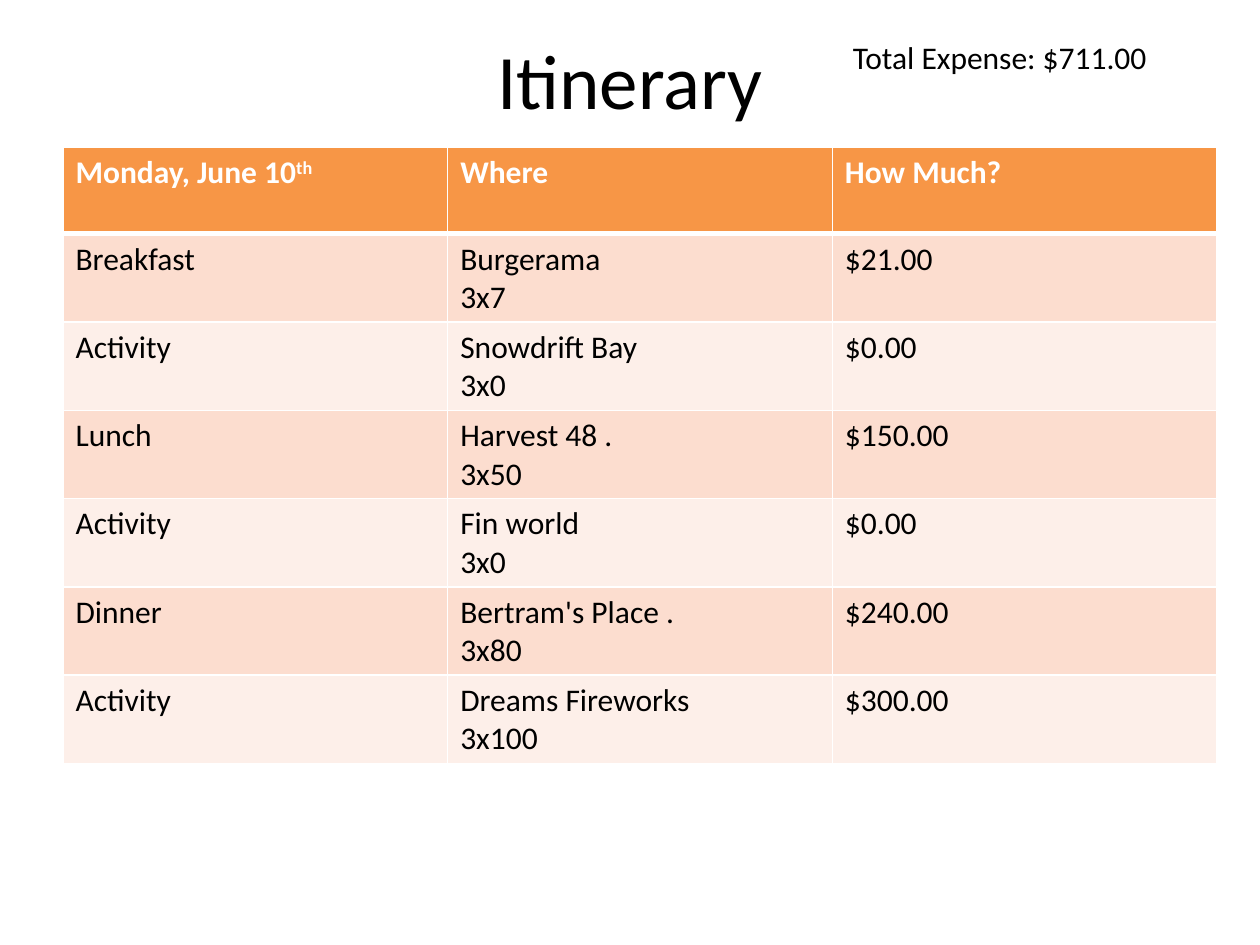
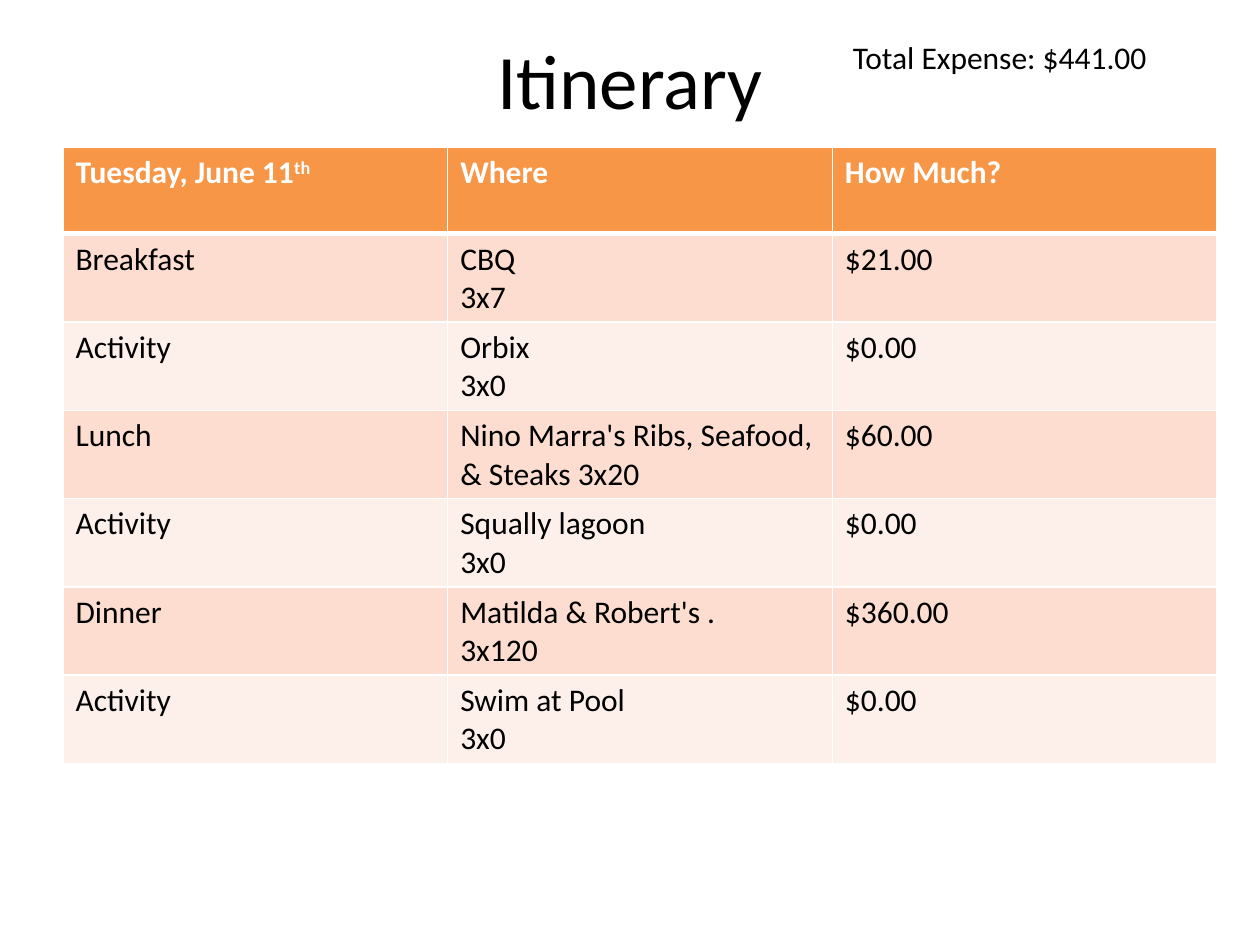
"""Build two daily itinerary slides, each with a total and an expense table."""
from lxml import etree
from pptx import Presentation
from pptx.dml.color import RGBColor
from pptx.enum.text import MSO_ANCHOR, PP_ALIGN
from pptx.oxml.ns import qn
from pptx.util import Inches, Pt

CENTER, LEFT = PP_ALIGN.CENTER, PP_ALIGN.LEFT
MIDDLE, TOP = MSO_ANCHOR.MIDDLE, MSO_ANCHOR.TOP
FONT = "Calibri"
BLACK, WHITE = "000000", "FFFFFF"
HEADER, BANDS = "F79646", ("FCDDCF", "FDEFE9")
MEALS = ("Breakfast", "Activity", "Lunch", "Activity", "Dinner", "Activity")

DAYS = [
    ("Monday, June 10", "$711.00", [
        ("Burgerama\n3x7", "$21.00"),
        ("Snowdrift Bay\n3x0", "$0.00"),
        ("Harvest 48 .\n3x50", "$150.00"),
        ("Fin world\n3x0", "$0.00"),
        ("Bertram's Place .\n3x80", "$240.00"),
        ("Dreams Fireworks\n3x100", "$300.00"),
    ]),
    ("Tuesday, June 11", "$441.00", [
        ("CBQ\n3x7", "$21.00"),
        ("Orbix\n3x0", "$0.00"),
        ("Nino Marra's Ribs, Seafood, & Steaks 3x20", "$60.00"),
        ("Squally lagoon\n3x0", "$0.00"),
        ("Matilda & Robert's .\n3x120", "$360.00"),
        ("Swim at Pool\n3x0", "$0.00"),
    ]),
]


def rgb(color):
    return RGBColor.from_string(color)


def write(tf, text, size=18, color=BLACK, bold=False, align=LEFT):
    tf.word_wrap = True
    tf.text = text
    for p in tf.paragraphs:
        p.alignment = align
        p.font.name = FONT
        p.font.size = Pt(size)
        p.font.bold = bold
        p.font.color.rgb = rgb(color)


prs = Presentation()
prs.slide_width, prs.slide_height = Inches(10), Inches(7.5)

for day, total, stops in DAYS:
    s = prs.slides.add_slide(prs.slide_layouts[6])
    for text, box, size, align, anchor in (
        ("Itinerary", (0.5, 0, 9, 1.25), 44, CENTER, MIDDLE),
        (f"Total Expense: {total}", (6.67, 0.25, 3.08, 0.4), 18, LEFT, TOP),
    ):
        tf = s.shapes.add_textbox(*map(Inches, box)).text_frame
        tf.vertical_anchor = anchor
        write(tf, text, size, align=align)

    rows = [(day, "Where", "How Much?")]
    rows += [(meal, *stop) for meal, stop in zip(MEALS, stops)]
    table = s.shapes.add_table(len(rows), 3, Inches(0.5), Inches(1.17),
                               Inches(9.16), Inches(4.8)).table
    for row, values in enumerate(rows):
        is_header = row == 0
        fill = HEADER if is_header else BANDS[(row - 1) % 2]
        widths = {"L": 1, "R": 1, "T": 3 if row == 1 else 1, "B": 3 if is_header else 1}
        for col, text in enumerate(values):
            cell = table.cell(row, col)
            write(cell.text_frame, text, color=WHITE if is_header else BLACK, bold=is_header)
            tcPr = cell._tc.get_or_add_tcPr()
            for side, width in widths.items():
                ln = etree.SubElement(tcPr, qn(f"a:ln{side}"), w=str(Pt(width)))
                solid = etree.SubElement(ln, qn("a:solidFill"))
                etree.SubElement(solid, qn("a:srgbClr"), val=WHITE)
            cell.fill.solid()
            cell.fill.fore_color.rgb = rgb(fill)

    r = table.cell(0, 0).text_frame.paragraphs[0].add_run()
    r.text = "th"
    r._r.get_or_add_rPr().set("baseline", "30000")

prs.save("out.pptx")
